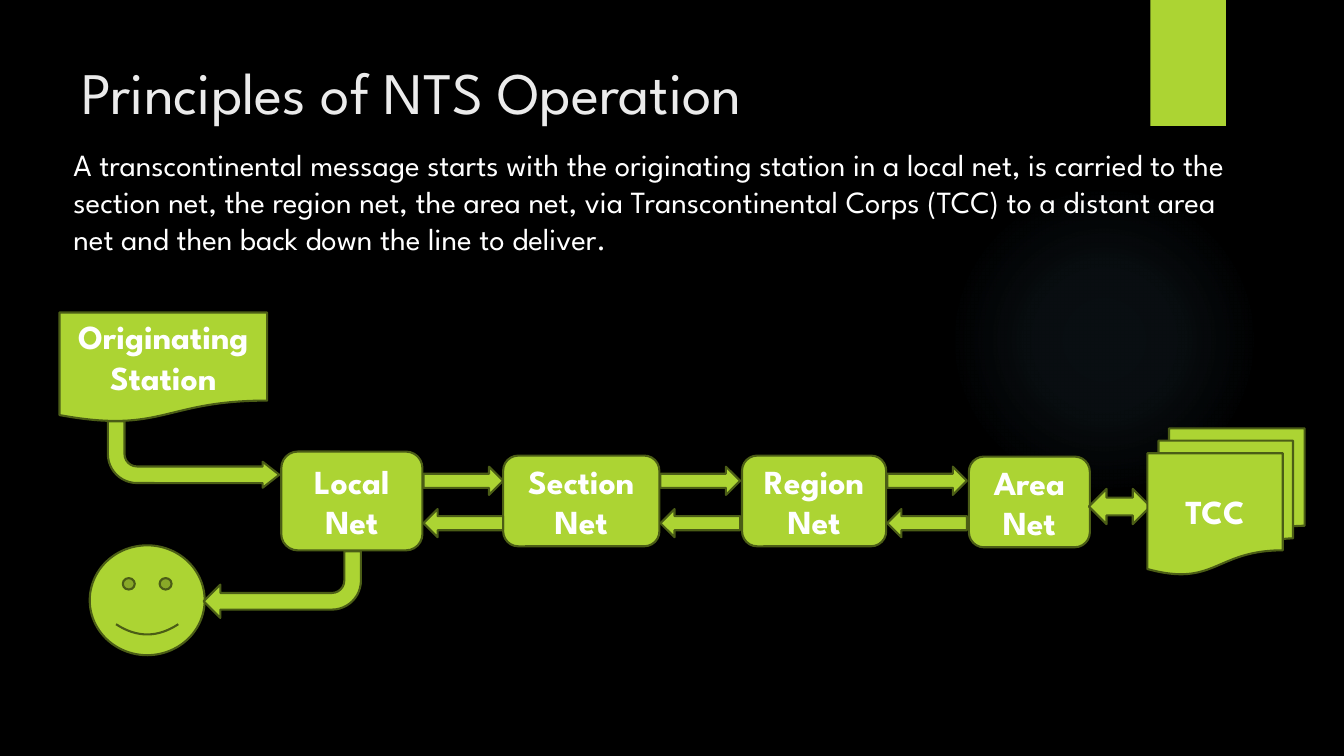
from lxml import etree
from pptx import Presentation
from pptx.dml.color import RGBColor
from pptx.enum import shapes, text
from pptx.oxml import ns
from pptx.util import Inches, Pt

BLACK = RGBColor(0x00, 0x00, 0x00)
WHITE = RGBColor(0xFF, 0xFF, 0xFF)
TITLE_GREY = RGBColor(0xEB, 0xEB, 0xEB)
LIME = RGBColor(0xAC, 0xD4, 0x33)
OLIVE = RGBColor(0x4B, 0x5D, 0x16)
GLOW_BLUE = RGBColor(0x7A, 0xC4, 0xF0)
FONT = "League Spartan"
KIND = shapes.MSO_SHAPE

# Name, left, top, width and height within the diagram
NETS = [
    ("Local Net", 2.2, 1.38, 1.4, 0.98),
    ("Section Net", 4.4, 1.42, 1.55, 0.9),
    ("Region Net", 6.77, 1.42, 1.43, 0.9),
    ("Area Net", 9.02, 1.43, 1.2, 0.9),
]
ARROW_WIDTH, ARROW_HEIGHT = 0.79, 0.28
OUTBOUND_TOP, RETURN_TOP = 1.53, 1.95


def write_text(shape, words, size=24, color=WHITE, bold=False,
               align=text.PP_ALIGN.LEFT, anchor=text.MSO_ANCHOR.TOP):
    frame = shape.text_frame
    frame.word_wrap = True
    frame.vertical_anchor = anchor
    paragraph = frame.paragraphs[0]
    paragraph.alignment = align
    run = paragraph.add_run()
    run.text = words
    run.font.name = FONT
    run.font.size = Pt(size)
    run.font.bold = bold
    run.font.color.rgb = color


def add_text(slide, left, top, width, height, words, **text_format):
    box = slide.shapes.add_textbox(
        Inches(left), Inches(top), Inches(width), Inches(height))
    write_text(box, words, **text_format)


def add_block(slide, kind, left, top, width, height, label=None,
              rotation=0, outlined=True):
    shape = slide.shapes.add_shape(
        kind, Inches(left), Inches(top), Inches(width), Inches(height))
    shape.shadow.inherit = False
    shape.rotation = rotation
    shape.fill.solid()
    shape.fill.fore_color.rgb = LIME
    if outlined:
        shape.line.color.rgb = OLIVE
        shape.line.width = Pt(1.5)
    else:
        shape.line.fill.background()
    if label:
        write_text(shape, label, bold=True, align=text.PP_ALIGN.CENTER,
                   anchor=text.MSO_ANCHOR.MIDDLE)
    return shape


def add_glow(slide, left, top, size):
    glow = add_block(slide, KIND.OVAL, left, top, size, size, outlined=False)
    properties = glow._element.spPr
    solid = properties.find(ns.qn("a:solidFill"))
    gradient = etree.Element(ns.qn("a:gradFill"), rotWithShape="1")
    stops = etree.SubElement(gradient, ns.qn("a:gsLst"))
    for position, opacity in ((0, 7), (36, 6), (69, 0)):
        stop = etree.SubElement(stops, ns.qn("a:gs"), pos=str(position * 1000))
        color = etree.SubElement(stop, ns.qn("a:srgbClr"), val=str(GLOW_BLUE))
        etree.SubElement(color, ns.qn("a:alpha"), val=str(opacity * 1000))
    circle = etree.SubElement(gradient, ns.qn("a:path"), path="circle")
    etree.SubElement(circle, ns.qn("a:fillToRect"),
                     l="50000", t="50000", r="50000", b="50000")
    properties.replace(solid, gradient)


def add_backdrop(slide):
    slide.background.fill.solid()
    slide.background.fill.fore_color.rgb = BLACK
    add_glow(slide, 9.41, 1.83, 3.08)
    add_block(slide, KIND.RECTANGLE, 11.41, 0, 0.75, 1.25, outlined=False)


def add_heading(slide, left, top):
    add_text(slide, left + 0.08, top, 10.29, 1.53,
             "Principles of NTS Operation", size=42, color=TITLE_GREY)
    add_text(slide, left, top + 0.9, 11.86, 1.21,
             "A transcontinental message starts with the originating station "
             "in a local net, is carried to the section net, the region net, "
             "the area net, via Transcontinental Corps (TCC) to a distant area "
             "net and then back down the line to deliver.", size=22)


def add_relay_diagram(slide, left, top):
    # Chain of nets, with an arrow each way between neighbours
    for name, x, y, width, height in NETS:
        add_block(slide, KIND.ROUNDED_RECTANGLE, left + x, top + y,
                  width, height, name)
    for name, x, y, width, height in NETS[:-1]:
        for arrow_top, rotation in ((OUTBOUND_TOP, 0), (RETURN_TOP, 180)):
            add_block(slide, KIND.RIGHT_ARROW, left + x + width + 0.01,
                      top + arrow_top, ARROW_WIDTH, ARROW_HEIGHT,
                      rotation=rotation)

    # Originating station and its arrow into the local net
    add_block(slide, KIND.FLOWCHART_DOCUMENT, left, top, 2.06, 1.09,
              "Originating Station")
    entry = add_block(slide, KIND.BENT_ARROW, left + 0.48, top + 1.08,
                      1.7, 0.66)
    entry.adjustments[1] = 0.196
    entry._element.spPr.find(ns.qn("a:xfrm")).set("flipV", "1")

    # Delivery to the recipient
    add_block(slide, KIND.SMILEY_FACE, left + 0.3, top + 2.31, 1.14, 1.09)
    add_block(slide, KIND.BENT_ARROW, left + 1.43, top + 2.37, 1.56, 0.66,
              rotation=180)

    # Exchange with the Transcontinental Corps
    add_block(slide, KIND.LEFT_RIGHT_ARROW, left + 10.21, top + 1.75,
              0.61, 0.35)
    add_block(slide, KIND.FLOWCHART_MULTIDOCUMENT, left + 10.79, top + 1.15,
              1.56, 1.45, "TCC")


def main():
    presentation = Presentation()
    presentation.slide_width = Inches(13.33)
    presentation.slide_height = Inches(7.5)
    slide = presentation.slides.add_slide(presentation.slide_layouts[6])
    add_backdrop(slide)
    add_heading(slide, 0.63, 0.5)
    add_relay_diagram(slide, 0.59, 3.1)
    presentation.save("out.pptx")


if __name__ == "__main__":
    main()
